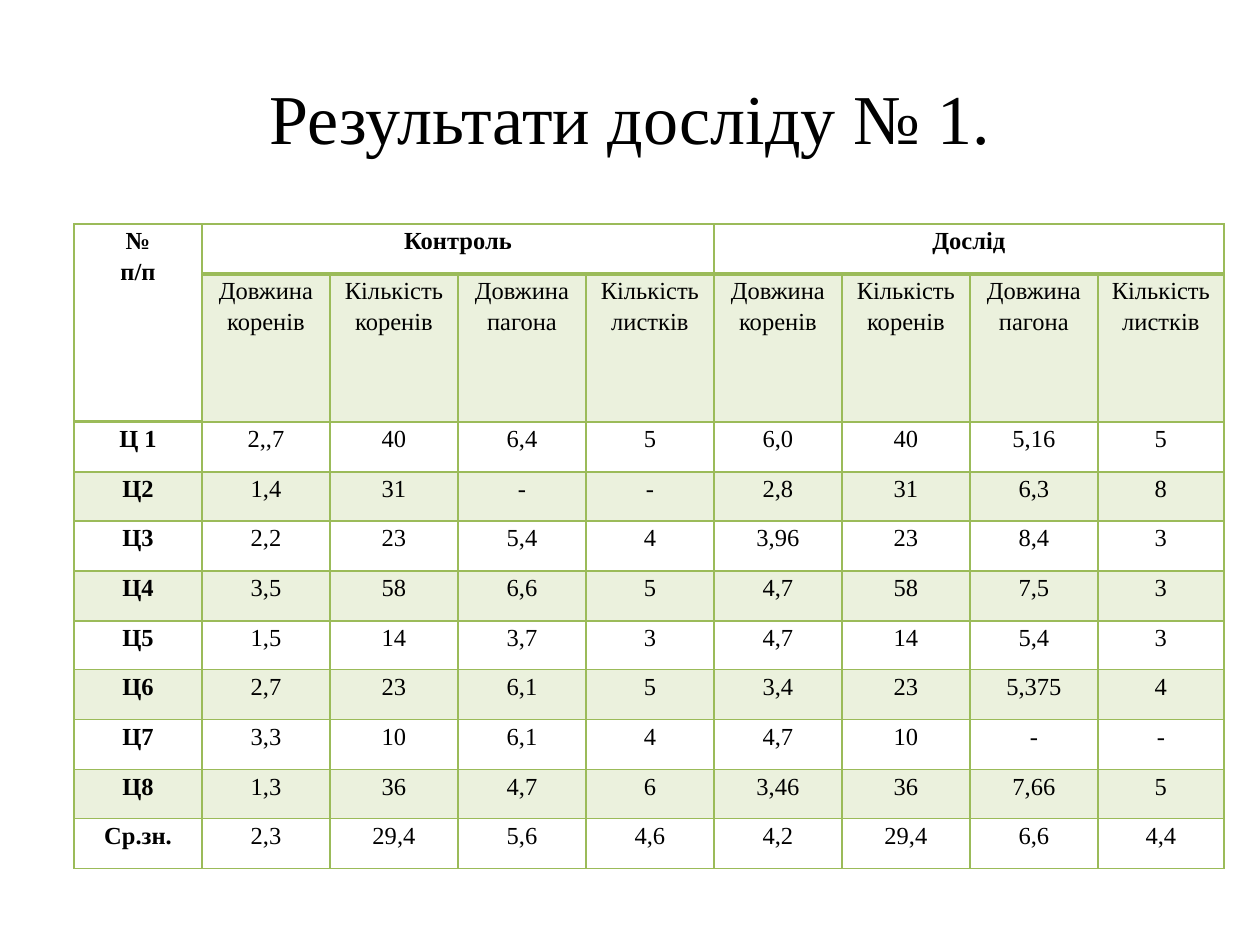
from lxml import etree
from pptx import Presentation
from pptx.dml.color import RGBColor
from pptx.enum.text import MSO_ANCHOR as Anchor, PP_ALIGN as Align
from pptx.oxml.ns import qn
from pptx.util import Emu, Pt

PX = 914400 / 126
GREEN = "9BBB59"
BLACK = "000000"


def px(length):
    return Emu(round(length * PX))


def color(hex_string):
    return RGBColor.from_string(hex_string)


class SlideBuilder:
    font = "Times New Roman"
    title_size, cell_size = 40, 14
    line_spacing = 1.15
    cell_inset = 9
    thin, thick = 1, 2
    band_alpha = 20

    def __init__(self, slide):
        self.slide = slide

    def add_lines(self, frame, lines, size, bold=False, spacing=None):
        for index, line in enumerate(lines):
            paragraph = frame.paragraphs[0] if index == 0 else frame.add_paragraph()
            paragraph.alignment = Align.CENTER
            if spacing:
                paragraph.line_spacing = spacing
            run = paragraph.add_run()
            run.text = line
            run.font.name = self.font
            run.font.size = Pt(size)
            run.font.bold = bold
            run.font.color.rgb = color(BLACK)

    def title(self, text, left, top, width, height):
        heading = self.slide.shapes.add_textbox(px(left), px(top), px(width), px(height))
        frame = heading.text_frame
        frame.word_wrap = True
        frame.vertical_anchor = Anchor.MIDDLE
        self.add_lines(frame, [text], self.title_size)

    def table(self, left, top, widths, heights):
        frame = self.slide.shapes.add_table(
            len(heights), len(widths), px(left), px(top), px(sum(widths)), px(sum(heights)))
        grid = frame.table
        grid.first_row = grid.horz_banding = False
        for column, width in zip(grid.columns, widths):
            column.width = px(width)
        for row, height in zip(grid.rows, heights):
            row.height = px(height)
        return grid

    def borders(self, cell, top, bottom):
        properties = cell._tc.get_or_add_tcPr()
        sides = {"lnL": self.thin, "lnR": self.thin, "lnT": top, "lnB": bottom}
        for side, points in sides.items():
            line = etree.SubElement(properties, qn(f"a:{side}"), w=str(Pt(points)))
            fill = etree.SubElement(line, qn("a:solidFill"))
            etree.SubElement(fill, qn("a:srgbClr"), val=GREEN)

    def cell(self, cell, text, bold, banded, top, bottom):
        cell.margin_left = cell.margin_right = px(self.cell_inset)
        cell.margin_top = cell.margin_bottom = 0
        self.borders(cell, top, bottom)
        if banded:
            cell.fill.solid()
            cell.fill.fore_color.rgb = color(GREEN)
            tint = cell._tc.tcPr.find(qn("a:solidFill")).find(qn("a:srgbClr"))
            etree.SubElement(tint, qn("a:alpha"), val=str(self.band_alpha * 1000))
        else:
            cell.fill.background()
        if text:
            self.add_lines(cell.text_frame, text.split("\n"), self.cell_size, bold,
                           self.line_spacing)


MEASURES = ["Довжина\nкоренів", "Кількість коренів", "Довжина пагона", "Кількість\nлистків"]
RESULTS = [
    ["№\nп/п", "Контроль", "", "", "", "Дослід", "", "", ""],
    ["", *MEASURES, *MEASURES],
    ["Ц 1", "2,,7", "40", "6,4", "5", "6,0", "40", "5,16", "5"],
    ["Ц2", "1,4", "31", "-", "-", "2,8", "31", "6,3", "8"],
    ["Ц3", "2,2", "23", "5,4", "4", "3,96", "23", "8,4", "3"],
    ["Ц4", "3,5", "58", "6,6", "5", "4,7", "58", "7,5", "3"],
    ["Ц5", "1,5", "14", "3,7", "3", "4,7", "14", "5,4", "3"],
    ["Ц6", "2,7", "23", "6,1", "5", "3,4", "23", "5,375", "4"],
    ["Ц7", "3,3", "10", "6,1", "4", "4,7", "10", "-", "-"],
    ["Ц8", "1,3", "36", "4,7", "6", "3,46", "36", "7,66", "5"],
    ["Ср.зн.", "2,3", "29,4", "5,6", "4,6", "4,2", "29,4", "6,6", "4,4"],
]


def main():
    presentation = Presentation()
    presentation.slide_width, presentation.slide_height = px(1260), px(945)
    builder = SlideBuilder(presentation.slides.add_slide(presentation.slide_layouts[6]))

    # Title
    builder.title("Результати досліду № 1.", 63, 38, 1134, 157)

    # Table grid: two header rows, then equal rows sharing the remaining height
    data_rows, data_height = len(RESULTS) - 2, 447
    edges = [round(data_height * i / data_rows) for i in range(data_rows + 1)]
    heights = [50, 148] + [low - high for high, low in zip(edges, edges[1:])]
    results = builder.table(74, 224, [128] * 8 + [126], heights)

    # Merged headers
    results.cell(0, 0).merge(results.cell(1, 0))
    for first in (1, 5):
        results.cell(0, first).merge(results.cell(0, first + 3))

    # Cells: bold headers, tinted odd rows, thick rules below the bold headers
    for r, row in enumerate(RESULTS):
        for c, text in enumerate(row):
            below_header = r == 1 or (r == 2 and c == 0)
            above_body = r == 0 or (r == 1 and c == 0)
            builder.cell(
                results.cell(r, c), text,
                bold=r == 0 or c == 0,
                banded=r % 2 == 1 and (r, c) != (1, 0),
                top=builder.thick if below_header else builder.thin,
                bottom=builder.thick if above_body else builder.thin)

    presentation.save("out.pptx")


if __name__ == "__main__":
    main()
